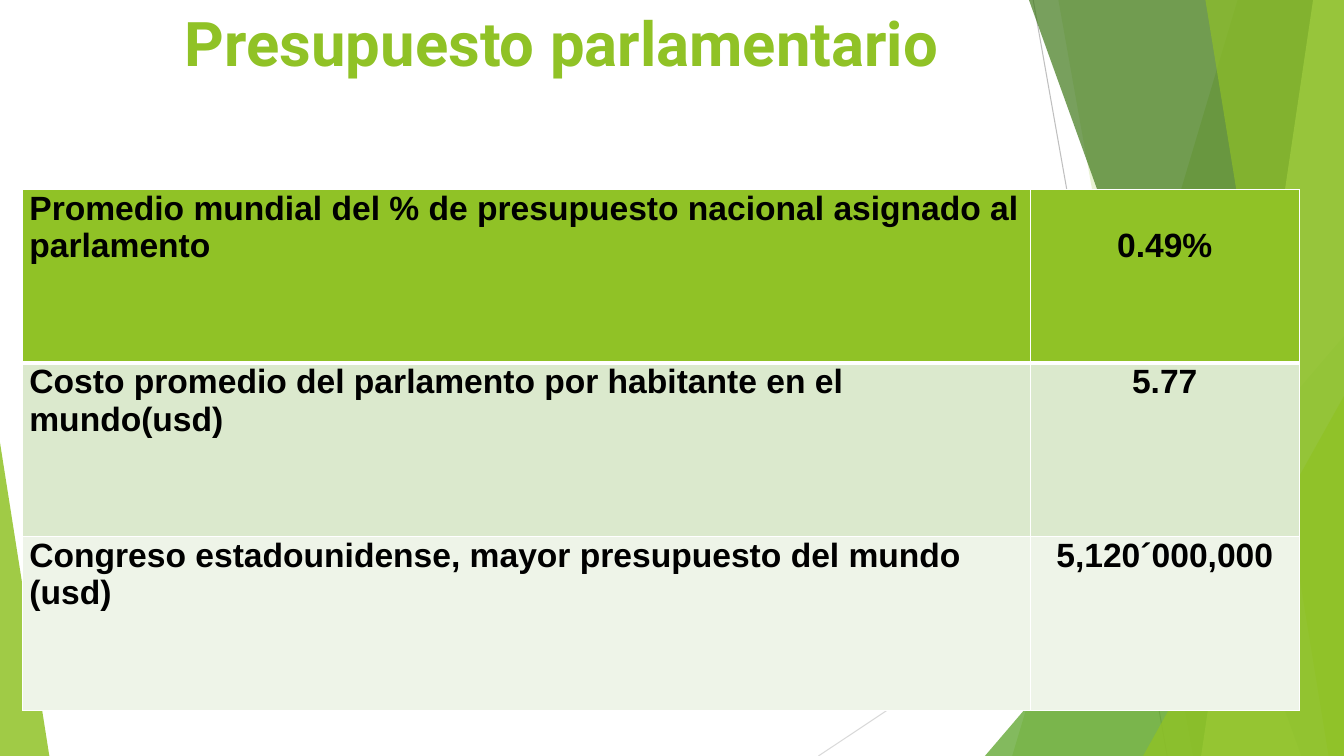
from dataclasses import dataclass

from lxml import etree
from pptx import Presentation
from pptx.dml.color import RGBColor
from pptx.enum.shapes import MSO_CONNECTOR, MSO_SHAPE
from pptx.enum.text import MSO_ANCHOR, PP_ALIGN
from pptx.oxml.ns import qn
from pptx.util import Pt

LEFT, CENTER = PP_ALIGN.LEFT, PP_ALIGN.CENTER
TOP = MSO_ANCHOR.TOP
STRAIGHT = MSO_CONNECTOR.STRAIGHT
TRIANGLE = MSO_SHAPE.ISOSCELES_TRIANGLE
WIDTH, HEIGHT = 960, 540


@dataclass(frozen=True)
class Theme:
    green: str = "90C226"
    mid_green: str = "54A021"
    dark_green: str = "3F7819"
    pale_green: str = "C0E474"
    band_dark: str = "DBE9CD"
    band_light: str = "EEF4E8"
    white: str = "FFFFFF"
    black: str = "000000"
    line_dark: str = "BFBFBF"
    line_light: str = "D9D9D9"
    title_font: str = "Roboto"
    body_font: str = "Arial"
    title_size: float = 44
    body_size: float = 24


@dataclass(frozen=True)
class Ray:
    x1: float
    y1: float
    x2: float
    y2: float
    color: str


@dataclass(frozen=True)
class Panel:
    top_x: float
    bottom_x: float
    color: str
    alpha: int


@dataclass(frozen=True)
class Corner:
    x: float
    y: float
    w: float
    adj: float
    color: str
    alpha: int


@dataclass(frozen=True)
class BudgetRow:
    label: str
    value: str
    fill: str
    value_top: float = 0
    border_top: float = 1
    border_bottom: float = 1


T = Theme()

DECOR = [
    Ray(738, 0, 833.75, 540, T.line_dark),
    Ray(960, 290, 584.6, 540, T.line_light),
    Panel(884, 723, T.green, 30),
    Panel(756, 852, T.green, 20),
    Corner(703.5, 240, 256.5, 1, T.mid_green, 72),
    Panel(735, 929.5, T.dark_green, 70),
    Panel(938, 858, T.pale_green, 70),
    Panel(861, 949, T.green, 65),
    Corner(816.5, 283, 143.5, 1, T.green, 80),
    Corner(0, 316, 35.25, 0, T.green, 85),
]

ROWS = [
    BudgetRow("Promedio mundial del % de presupuesto nacional asignado al parlamento",
              "0.49%", T.green, value_top=27, border_bottom=3),
    BudgetRow("Costo promedio del parlamento por habitante en el mundo(usd)",
              "5.77", T.band_dark, border_top=3),
    BudgetRow("Congreso estadounidense, mayor presupuesto del mundo (usd)",
              "5,120´000,000", T.band_light),
]


def rgb(color: str) -> RGBColor:
    return RGBColor.from_string(color)


def paint(shape, color: str, alpha: int) -> None:
    shape.shadow.inherit = False
    shape.line.fill.background()
    shape.fill.solid()
    shape.fill.fore_color.rgb = rgb(color)
    clr = shape.element.spPr.find(qn("a:solidFill"))[0]
    etree.SubElement(clr, qn("a:alpha"), val=str(alpha * 1000))


def draw_ray(s, ray: Ray) -> None:
    line = s.shapes.add_connector(STRAIGHT, Pt(ray.x1), Pt(ray.y1), Pt(ray.x2), Pt(ray.y2))
    line.line.color.rgb = rgb(ray.color)
    line.line.width = Pt(0.75)
    etree.SubElement(line.element.spPr, qn("a:effectLst"))


def draw_panel(s, panel: Panel) -> None:
    outline = s.shapes.build_freeform(Pt(panel.top_x), 0)
    outline.add_line_segments([(Pt(WIDTH), 0), (Pt(WIDTH), Pt(HEIGHT)),
                               (Pt(panel.bottom_x), Pt(HEIGHT))], close=True)
    paint(outline.convert_to_shape(), panel.color, panel.alpha)


def draw_corner(s, corner: Corner) -> None:
    sp = s.shapes.add_shape(TRIANGLE, Pt(corner.x), Pt(corner.y),
                            Pt(corner.w), Pt(HEIGHT - corner.y))
    sp.adjustments[0] = corner.adj
    paint(sp, corner.color, corner.alpha)


def write(tf, text: str, font: str, size: float, color: str, align) -> None:
    tf.word_wrap = True
    p = tf.paragraphs[0]
    p.alignment = align
    r = p.add_run()
    r.text = text
    r.font.name = font
    r.font.size = Pt(size)
    r.font.bold = True
    r.font.color.rgb = rgb(color)


def draw_title(s, text: str) -> None:
    sp = s.shapes.title
    sp.left, sp.top, sp.width, sp.height = Pt(0), Pt(0), Pt(814), Pt(85)
    sp.text_frame.vertical_anchor = TOP
    write(sp.text_frame, text, T.title_font, T.title_size, T.green, CENTER)
    sp.element.getparent().append(sp.element)


def draw_borders(cell, top: float, bottom: float) -> None:
    tcPr = cell._tc.get_or_add_tcPr()
    for side, width in (("L", 1), ("R", 1), ("T", top), ("B", bottom)):
        ln = etree.SubElement(tcPr, qn(f"a:ln{side}"), w=str(Pt(width)))
        fill = etree.SubElement(ln, qn("a:solidFill"))
        etree.SubElement(fill, qn("a:srgbClr"), val=T.white)


def draw_table(s, rows: list[BudgetRow]) -> None:
    table = s.shapes.add_table(len(rows), 2, Pt(16), Pt(135.5), Pt(912), Pt(372)).table
    for column, width in zip(table.columns, (720, 192)):
        column.width = Pt(width)
    for i, row in enumerate(rows):
        table.rows[i].height = Pt(124)
        entries = ((row.label, LEFT, 0), (row.value, CENTER, row.value_top))
        for j, (text, align, margin_top) in enumerate(entries):
            cell = table.cell(i, j)
            draw_borders(cell, row.border_top, row.border_bottom)
            cell.fill.solid()
            cell.fill.fore_color.rgb = rgb(row.fill)
            cell.margin_left = cell.margin_right = Pt(5)
            cell.margin_top, cell.margin_bottom = Pt(margin_top), Pt(0)
            cell.vertical_anchor = TOP
            write(cell.text_frame, text, T.body_font, T.body_size, T.black, align)


def main() -> None:
    prs = Presentation()
    prs.slide_width, prs.slide_height = Pt(WIDTH), Pt(HEIGHT)
    s = prs.slides.add_slide(prs.slide_layouts[5])
    painters = {Ray: draw_ray, Panel: draw_panel, Corner: draw_corner}
    for item in DECOR:
        painters[type(item)](s, item)
    draw_title(s, "Presupuesto parlamentario ")
    draw_table(s, ROWS)
    prs.save("out.pptx")


if __name__ == "__main__":
    main()
